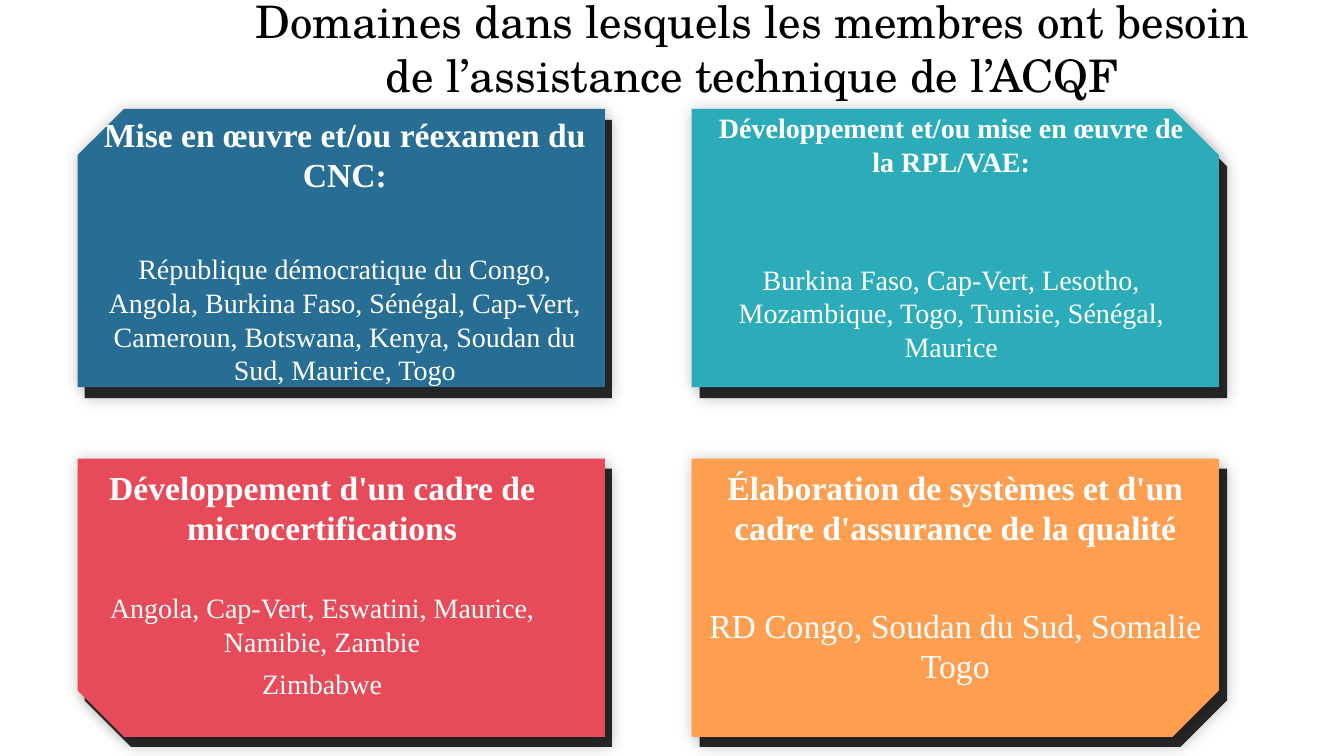
from lxml import etree
from pptx import Presentation
from pptx.dml.color import RGBColor
from pptx.enum import shapes, text
from pptx.oxml import ns
from pptx.util import Inches, Pt

COLORS = {"ink": "000000", "dark": "262626", "white": "FFFFFF", "blue": "286D94",
          "teal": "2CACB8", "red": "E74B59", "gold": "FE9E50"}
SIZE = (5.23, 2.76)
SERIF = "Times New Roman"

CARDS = [
    {"fill": "blue", "back": (0.84, 1.19), "front": (0.77, 1.08), "flip": "H",
     "box": (0.84, 1.08, 5.16, 2.49), "paras": [
         ("Mise en œuvre et/ou réexamen du CNC:", 24, True, 0),
         ("République démocratique du Congo, Angola, Burkina Faso, Sénégal, Cap-Vert, "
          "Cameroun, Botswana, Kenya, Soudan du Sud, Maurice, Togo", 20, False, 41)]},
    {"fill": "teal", "back": (6.94, 1.19), "front": (6.86, 1.08), "flip": "",
     "box": (6.94, 1.05, 4.99, 2.63), "paras": [
         ("Développement et/ou mise en œuvre de la RPL/VAE:", 20, True, 0),
         ("Burkina Faso, Cap-Vert, Lesotho, Mozambique, Togo, Tunisie, Sénégal, "
          "Maurice", 20, False, 60)]},
    {"fill": "red", "back": (0.84, 4.65), "front": (0.77, 4.55), "flip": "HV",
     "box": (0.94, 4.58, 4.51, 2.52), "paras": [
         ("Développement d'un cadre de microcertifications", 24, True, 0),
         ("Angola, Cap-Vert, Eswatini, Maurice, Namibie, Zambie", 20, False, 31),
         ("Zimbabwe", 20, False, 6)]},
    {"fill": "gold", "back": (6.94, 4.65), "front": (6.86, 4.55), "flip": "V",
     "box": (6.86, 4.58, 5.23, 2.36), "paras": [
         ("Élaboration de systèmes et d'un cadre d'assurance de la qualité", 24, True, 0),
         ("RD Congo, Soudan du Sud, Somalie Togo", 24, False, 41)]},
]


def paint(name):
    """Return the named colour."""
    return RGBColor.from_string(COLORS[name])


def add_glow(shape):
    """Give a shape a soft shadow on all sides."""
    shape.shadow.inherit = False
    effects = shape._element.spPr.find(ns.qn("a:effectLst"))
    glow = etree.SubElement(effects, ns.qn("a:outerShdw"), blurRad=str(Pt(10)), dist="0",
                            dir="0", algn="ctr", rotWithShape="0")
    color = etree.SubElement(glow, ns.qn("a:srgbClr"), val=COLORS["ink"])
    etree.SubElement(color, ns.qn("a:alpha"), val="20000")


def add_panel(slide, spot, fill, flip):
    """Draw a panel with one cut corner."""
    kind = shapes.MSO_SHAPE.SNIP_1_RECTANGLE
    panel = slide.shapes.add_shape(kind, *map(Inches, spot + SIZE))
    panel.fill.solid()
    panel.fill.fore_color.rgb = paint(fill)
    panel.line.fill.background()
    for axis in flip:
        panel._element.spPr.xfrm.set("flip" + axis, "1")
    add_glow(panel)


def add_text(slide, box, paras, font, color):
    """Write centred paragraphs of (words, size, bold, space before)."""
    frame = slide.shapes.add_textbox(*map(Inches, box)).text_frame
    frame.word_wrap = True
    frame.auto_size = text.MSO_AUTO_SIZE.SHAPE_TO_FIT_TEXT
    frame.text = "\n".join(para[0] for para in paras)
    for para, (_, size, bold, gap) in zip(frame.paragraphs, paras):
        para.alignment = text.PP_ALIGN.CENTER
        para.space_before = Pt(gap)
        style = para.runs[0].font
        style.name, style.size, style.bold = font, Pt(size), bold
        style.color.rgb = paint(color)


def main():
    """Build and save the slide."""
    deck = Presentation()
    deck.slide_width, deck.slide_height = Inches(13.33), Inches(7.5)
    slide = deck.slides.add_slide(deck.slide_layouts[6])
    title = "Domaines dans lesquels les membres ont besoin de l’assistance technique de l’ACQF"
    add_text(slide, (2.23, -0.11, 10.47, 1.18), [(title, 32, False, 0)],
             "TeX Gyre Schola", "ink")
    for card in CARDS:
        add_panel(slide, card["back"], "dark", card["flip"])
    for card in CARDS:
        add_panel(slide, card["front"], card["fill"], card["flip"])
    for card in CARDS:
        add_text(slide, card["box"], card["paras"], SERIF, "white")
    deck.save("out.pptx")


if __name__ == "__main__":
    main()
